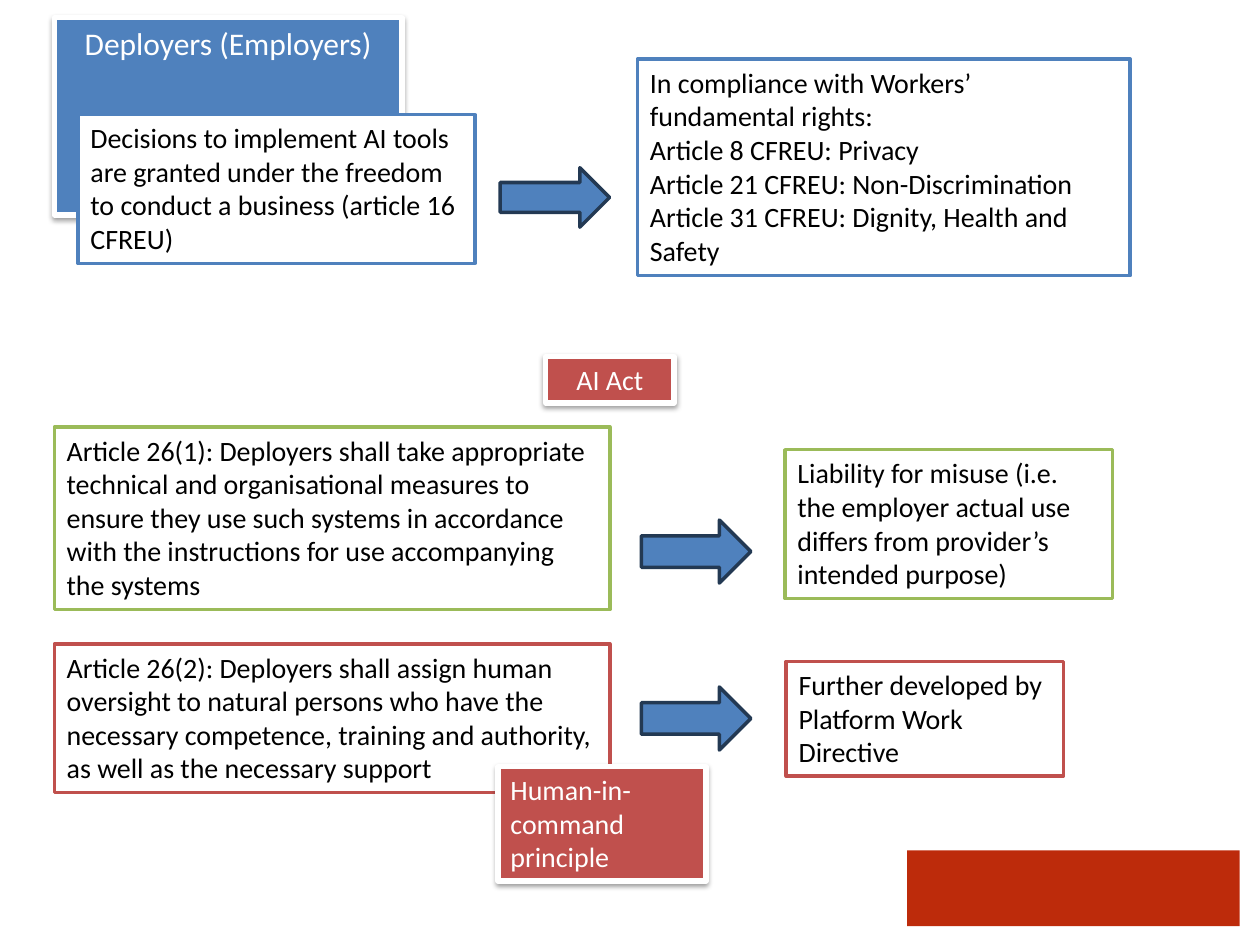
from dataclasses import dataclass

import lxml.etree
import pptx
import pptx.dml.color
import pptx.enum.shapes
import pptx.enum.text
import pptx.oxml.ns
import pptx.util

Pt = pptx.util.Pt
MSO_SHAPE = pptx.enum.shapes.MSO_SHAPE
ALIGN = pptx.enum.text.PP_ALIGN


@dataclass(frozen=True)
class Theme:
    font: str = "Calibri"
    title_size: float = 18
    body_size: float = 16
    white: str = "FFFFFF"
    black: str = "000000"
    blue: str = "4F81BD"
    navy: str = "233953"
    green: str = "9BBB59"
    red: str = "C0504D"
    band: str = "BD2B0B"


def rgb(value):
    return pptx.dml.color.RGBColor.from_string(value)


def write_text(tf, text, *, font, size, color, align=ALIGN.LEFT):
    """Fill a text frame with one paragraph per line of text."""
    tf.word_wrap = True
    tf.auto_size = pptx.enum.text.MSO_AUTO_SIZE.SHAPE_TO_FIT_TEXT
    tf.vertical_anchor = pptx.enum.text.MSO_ANCHOR.TOP
    for i, line in enumerate(text.split("\n")):
        p = tf.paragraphs[0] if i == 0 else tf.add_paragraph()
        p.alignment = align
        r = p.add_run()
        r.text = line
        r.font.name = font
        r.font.size = Pt(size)
        r.font.color.rgb = rgb(color)


def add_soft_shadow(sp):
    effects = sp._element.spPr.find(pptx.oxml.ns.qn("a:effectLst"))
    shadow = lxml.etree.SubElement(
        effects, pptx.oxml.ns.qn("a:outerShdw"),
        blurRad=str(Pt(3.1)), dist=str(Pt(1.6)), dir="5400000", rotWithShape="0")
    color = lxml.etree.SubElement(shadow, pptx.oxml.ns.qn("a:srgbClr"), val="000000")
    lxml.etree.SubElement(color, pptx.oxml.ns.qn("a:alpha"), val="38000")


class SlideBuilder:
    def __init__(self, slide, theme):
        self.slide = slide
        self.theme = theme

    def paint(self, sp, fill, line=None, width=2):
        sp.shadow.inherit = False
        sp.fill.solid()
        sp.fill.fore_color.rgb = rgb(fill)
        if line is None:
            sp.line.fill.background()
        else:
            sp.line.color.rgb = rgb(line)
            sp.line.width = Pt(width)

    def shape(self, kind, box, fill, line=None):
        sp = self.slide.shapes.add_shape(kind, *map(Pt, box))
        self.paint(sp, fill, line)
        return sp

    def outlined_box(self, box, text, line):
        t = self.theme
        sp = self.shape(MSO_SHAPE.RECTANGLE, box, t.white, line)
        write_text(sp.text_frame, text, font=t.font, size=t.body_size, color=t.black)

    def style_label(self, sp, text, fill, size, align):
        """Give a shape a solid fill, a white frame and a shadow."""
        t = self.theme
        self.paint(sp, fill, t.white, 3)
        add_soft_shadow(sp)
        write_text(sp.text_frame, text, font=t.font, size=size,
                   color=t.white, align=align)

    def title(self, box, text):
        sp = self.slide.shapes.title
        sp.left, sp.top, sp.width, sp.height = map(Pt, box)
        self.style_label(sp, text, self.theme.blue, self.theme.title_size, ALIGN.CENTER)

    def label(self, box, text, align):
        sp = self.shape(MSO_SHAPE.RECTANGLE, box, self.theme.red)
        self.style_label(sp, text, self.theme.red, self.theme.body_size, align)

    def arrow(self, left, top, height):
        self.shape(MSO_SHAPE.RIGHT_ARROW, (left, top, 62.6, height),
                   self.theme.blue, self.theme.navy)


def main():
    prs = pptx.Presentation()
    prs.slide_width, prs.slide_height = Pt(720), Pt(540)
    theme = Theme()
    s = SlideBuilder(prs.slides.add_slide(prs.slide_layouts[5]), theme)
    left, article_width, arrow_left = 31, 317.5, 366.5

    s.shape(MSO_SHAPE.RECTANGLE, (518.4, 486, 190, 43.2), theme.band)

    s.title((left, 10.1, 198.7, 29.1), "Deployers (Employers)")
    s.outlined_box(
        (44.6, 65.5, 226.8, 85),
        "Decisions to implement AI tools are granted under the freedom to conduct "
        "a business (article 16 CFREU)", theme.blue)
    s.outlined_box(
        (364.3, 33.8, 281.5, 123.8),
        "In compliance with Workers’ fundamental rights:\n"
        "Article 8 CFREU: Privacy\n"
        "Article 21 CFREU: Non-Discrimination\n"
        "Article 31 CFREU: Dignity, Health and Safety", theme.blue)
    s.arrow(285.8, 95.8, 34)

    s.label((311.8, 203.8, 73.4, 26.6), "AI Act", ALIGN.CENTER)
    s.outlined_box(
        (left, 244, article_width, 104.4),
        "Article 26(1): Deployers shall take appropriate technical and organisational "
        "measures to ensure they use such systems in accordance with the instructions "
        "for use accompanying the systems", theme.green)
    s.outlined_box(
        (448.6, 257, 187.2, 85),
        "Liability for misuse (i.e. the employer actual use differs from provider’s "
        "intended purpose)", theme.green)
    s.arrow(arrow_left, 297.2, 36)

    s.outlined_box(
        (left, 368, article_width, 85),
        "Article 26(2): Deployers shall assign human oversight to natural persons who "
        "have the necessary competence, training and authority, as well as the "
        "necessary support", theme.red)
    s.label((284.6, 438, 118.8, 65.5), "Human-in-command principle", ALIGN.LEFT)
    s.outlined_box((449.3, 378, 158.4, 65.5),
                   "Further developed by Platform Work Directive", theme.red)
    s.arrow(arrow_left, 392.6, 36)

    prs.save("out.pptx")


if __name__ == "__main__":
    main()
